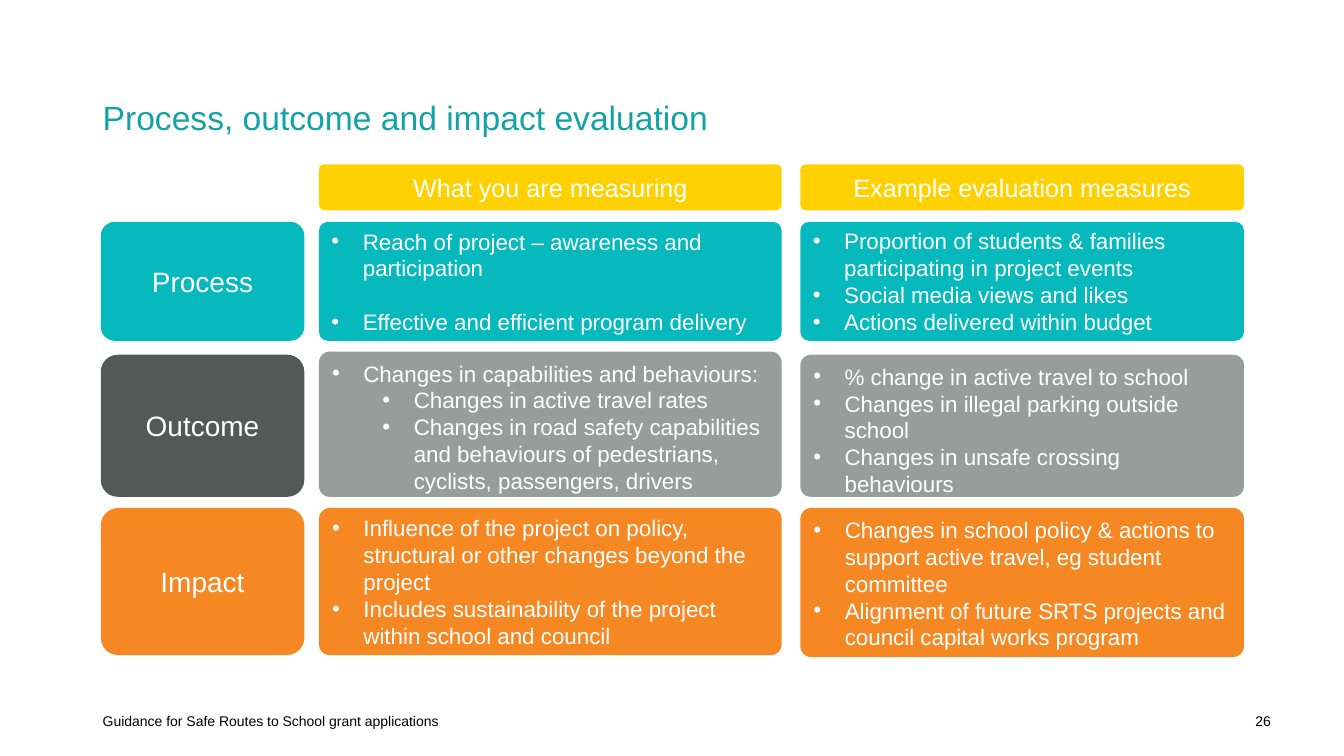
"""Build the slide on process, outcome and impact evaluation."""
from lxml.etree import SubElement
from pptx import Presentation
from pptx.dml.color import RGBColor
from pptx.enum.shapes import MSO_SHAPE
from pptx.enum.text import MSO_ANCHOR, PP_ALIGN
from pptx.oxml.ns import qn
from pptx.util import Cm, Pt

COLORS = {"title": "13A2A6", "header": "FFD100", "teal": "06B9BD", "dark": "555857",
          "grey": "989C9A", "orange": "F68824", "white": "FFFFFF", "black": "000000"}
TOP, MIDDLE, BOTTOM = MSO_ANCHOR.TOP, MSO_ANCHOR.MIDDLE, MSO_ANCHOR.BOTTOM
LEFT, CENTER, RIGHT = PP_ALIGN.LEFT, PP_ALIGN.CENTER, PP_ALIGN.RIGHT

prs = Presentation()
prs.slide_width, prs.slide_height = Cm(33.87), Cm(19.05)
s = prs.slides.add_slide(prs.slide_layouts[6])


def write(sp, items, size, color, align, anchor, bullets=False, gap=0):
    """Fill a shape with paragraphs given as (level, text)."""
    tf = sp.text_frame
    tf.word_wrap, tf.vertical_anchor = True, anchor
    for i, (level, text) in enumerate(items):
        p = tf.paragraphs[0] if i == 0 else tf.add_paragraph()
        p.alignment = align
        if i and gap:
            p.space_before = Pt(gap)
        if bullets:
            p.level = level
            pPr = p._p.get_or_add_pPr()
            pPr.set("marL", str(Cm(0.79 + 1.27 * level)))
            pPr.set("indent", str(Cm(-0.79)))
            SubElement(pPr, qn("a:buFont")).set("typeface", "Arial")
            SubElement(pPr, qn("a:buChar")).set("char", "•")
        r = p.add_run()
        r.text = text
        for name, value in {"name": "Arial", "size": Pt(size)}.items():
            setattr(r.font, name, value)
        r.font.color.rgb = RGBColor.from_string(COLORS[color])


def add_box(x, y, w, h, color, radius):
    """Add a plain rounded rectangle."""
    sp = s.shapes.add_shape(MSO_SHAPE.ROUNDED_RECTANGLE, Cm(x), Cm(y), Cm(w), Cm(h))
    sp.adjustments[0] = radius
    sp.shadow.inherit = False
    sp.fill.solid()
    sp.fill.fore_color.rgb = RGBColor.from_string(COLORS[color])
    sp.line.fill.background()
    return sp


texts = [
    ("Process, outcome and impact evaluation", 2.34, 1.02, 29.21, 2.57, 24, "title", LEFT, BOTTOM),
    ("26", 24.66, 17.65, 7.62, 1.02, 10, "black", RIGHT, MIDDLE),
    ("Guidance for Safe Routes to School grant applications",
     2.34, 17.65, 20.32, 1.02, 10, "black", LEFT, MIDDLE),
]
for text, x, y, w, h, size, color, align, anchor in texts:
    sp = s.shapes.add_textbox(Cm(x), Cm(y), Cm(w), Cm(h))
    write(sp, [(0, text)], size, color, align, anchor)
    if color == "title":
        sp.text_frame.paragraphs[0].line_spacing = 0.9

label_x, label_w = 2.54, 5.13
columns = [(8.04, 11.66, "What you are measuring"),
           (20.17, 11.18, "Example evaluation measures")]
for x, w, header in columns:
    write(add_box(x, 4.14, w, 1.16, "header", 0.119), [(0, header)], 18, "white", CENTER, MIDDLE)

rows = [
    ("Process", 5.59, 3.0, "teal", "teal", [
        (5.59, 3.0, MIDDLE, 19, [(0, "Reach of project – awareness and participation"),
                                 (0, "Effective and efficient program delivery")]),
        (5.59, 3.0, MIDDLE, 0, [(0, "Proportion of students & families participating in project events"),
                                (0, "Social media views and likes"),
                                (0, "Actions delivered within budget")])]),
    ("Outcome", 8.94, 3.58, "dark", "grey", [
        (8.86, 3.66, TOP, 0, [(0, "Changes in capabilities and behaviours:"),
                              (1, "Changes in active travel rates"),
                              (1, "Changes in road safety capabilities and behaviours of "
                                  "pedestrians, cyclists, passengers, drivers")]),
        (8.94, 3.58, TOP, 0, [(0, "% change in active travel to school"),
                              (0, "Changes in illegal parking outside school"),
                              (0, "Changes in unsafe crossing behaviours")])]),
    ("Impact", 12.8, 3.71, "orange", "orange", [
        (12.8, 3.71, MIDDLE, 0, [(0, "Influence of the project on policy, structural or other "
                                     "changes beyond the project"),
                                 (0, "Includes sustainability of the project within school and council")]),
        (12.8, 3.76, TOP, 0, [(0, "Changes in school policy & actions to support active travel, "
                                  "eg student committee"),
                              (0, "Alignment of future SRTS projects and council capital works program")])]),
]
for label, y, h, label_color, color, cells in rows:
    write(add_box(label_x, y, label_w, h, label_color, 0.119), [(0, label)], 20, "white", CENTER, MIDDLE)
    for (x, w, _), (top, height, anchor, gap, items) in zip(columns, cells):
        write(add_box(x, top, w, height, color, 0.074), items, 16, "white", LEFT, anchor, True, gap)

prs.save("out.pptx")
